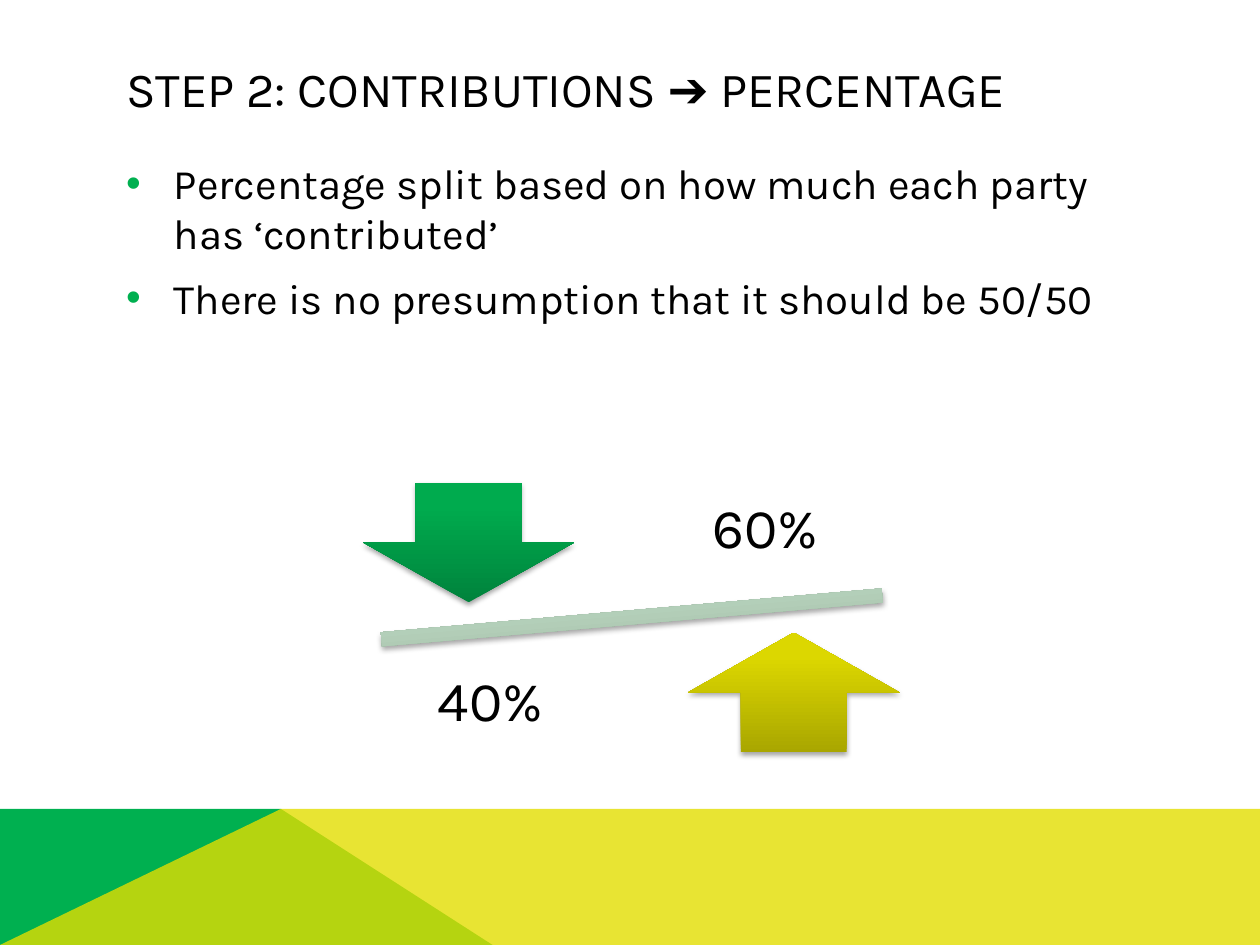
from lxml import etree
from pptx import Presentation
from pptx import util as u
from pptx.dml.color import RGBColor
from pptx.enum import shapes, text
from pptx.oxml.ns import qn

Inches, Pt = u.Inches, u.Pt


def color(hex_string):
    return RGBColor.from_string(hex_string)


def write(paragraph, content, font="Karla", size=24, align=text.PP_ALIGN.LEFT,
          before=0, after=0, spacing=1.0):
    run = paragraph.add_run()
    run.text = content
    run.font.name, run.font.size = font, Pt(size)
    run.font.color.rgb = color("000000")
    paragraph.alignment = align
    paragraph.space_before, paragraph.space_after = Pt(before), Pt(after)
    paragraph.line_spacing = spacing


presentation = Presentation()
presentation.slide_width, presentation.slide_height = Inches(10), Inches(7.5)
slide = presentation.slides.add_slide(presentation.slide_layouts[1])

# Footer bands
bands = [
    ([(0, 7.5), (0, 6.42), (2.23, 6.42), (3.91, 7.5)], "00B050", None),
    ([(0, 7.5), (2.23, 6.42), (10, 6.42), (10, 7.5)], "E3DE00", 80),
]
for points, fill, opacity in bands:
    corners = [(Inches(x), Inches(y)) for x, y in points]
    builder = slide.shapes.build_freeform(*corners[0])
    builder.add_line_segments(corners[1:], close=True)
    shape = builder.convert_to_shape()
    shape.shadow.inherit = False
    shape.fill.solid()
    shape.fill.fore_color.rgb = color(fill)
    shape.line.fill.background()
    if opacity:
        fill_color = shape.fill._xPr.find(qn("a:solidFill"))[0]
        etree.SubElement(fill_color, qn("a:alpha"), val=str(opacity * 1000))

# Title
title = slide.shapes.title
title.left, title.top, title.width, title.height = map(Inches, (0.9, 0.4, 8.22, 0.6))
title.text_frame.vertical_anchor = text.MSO_ANCHOR.MIDDLE
title.text_frame.auto_size = text.MSO_AUTO_SIZE.NONE
for content, font in [("STEP 2: CONTRIBUTIONS ", "Karla"), ("➔", "Arial"),
                      (" PERCENTAGE", "Karla")]:
    write(title.text_frame.paragraphs[0], content, font=font, size=28)

# Bullet list
body = slide.placeholders[1]
body.left, body.top, body.width, body.height = map(Inches, (0.9, 1.2, 8.23, 3.91))
frame = body.text_frame
frame.auto_size = text.MSO_AUTO_SIZE.NONE
bullets = ["Percentage split based on how much each party has ‘contributed’",
           "There is no presumption that it should be 50/50"]
for index, content in enumerate(bullets):
    paragraph = frame.add_paragraph() if index else frame.paragraphs[0]
    properties = paragraph._p.get_or_add_pPr()
    properties.set("marL", str(Inches(0.38)))
    properties.set("indent", str(-Inches(0.38)))
    bullet_color = etree.SubElement(properties, qn("a:buClr"))
    etree.SubElement(bullet_color, qn("a:srgbClr"), val="00B050")
    etree.SubElement(properties, qn("a:buFont"), typeface="Arial")
    etree.SubElement(properties, qn("a:buChar"), char="•")
    write(paragraph, content, before=8 if index else 0)

# Balance beam and arrows, darker at the bottom
kinds = shapes.MSO_SHAPE
balance = [
    (kinds.MATH_MINUS, (2.3, 4.66, 5.43, 0.48), -5, "96AD9A", "C2E0C8"),
    (kinds.DOWN_ARROW, (2.88, 3.83, 1.68, 0.95), 0, "00833C", "00AB4E"),
    (kinds.UP_ARROW, (5.46, 5.02, 1.68, 0.95), 0, "A9A600", "DCD700"),
]
for kind, box, rotation, dark, light in balance:
    shape = slide.shapes.add_shape(kind, *map(Inches, box))
    shape.rotation = rotation
    shape.line.fill.background()
    shape.fill.gradient()
    shape.fill.gradient_angle = 90
    for stop, position, shade in zip(shape.fill.gradient_stops, (0, 0.8), (dark, light)):
        stop.position = position
        stop.color.rgb = color(shade)
    shape.shadow.inherit = False
    effects = shape._element.spPr.find(qn("a:effectLst"))
    shadow = etree.SubElement(effects, qn("a:outerShdw"), blurRad=str(Pt(3.1)),
                              dist=str(Pt(1.8)), dir="5400000", rotWithShape="0")
    shadow_color = etree.SubElement(shadow, qn("a:srgbClr"), val="000000")
    etree.SubElement(shadow_color, qn("a:alpha"), val="35000")

# Percentages
for content, left, top in [("60%", 5.18, 3.71), ("40% ", 3.05, 5.09)]:
    label = slide.shapes.add_textbox(Inches(left), Inches(top), Inches(1.79), Inches(0.99))
    frame = label.text_frame
    frame.word_wrap = True
    frame.vertical_anchor = text.MSO_ANCHOR.MIDDLE
    frame.margin_left = frame.margin_right = Inches(0.25)
    frame.margin_top = frame.margin_bottom = Inches(0.25)
    write(frame.paragraphs[0], content, size=32, align=text.PP_ALIGN.CENTER,
          after=11, spacing=0.9)

presentation.save("out.pptx")
